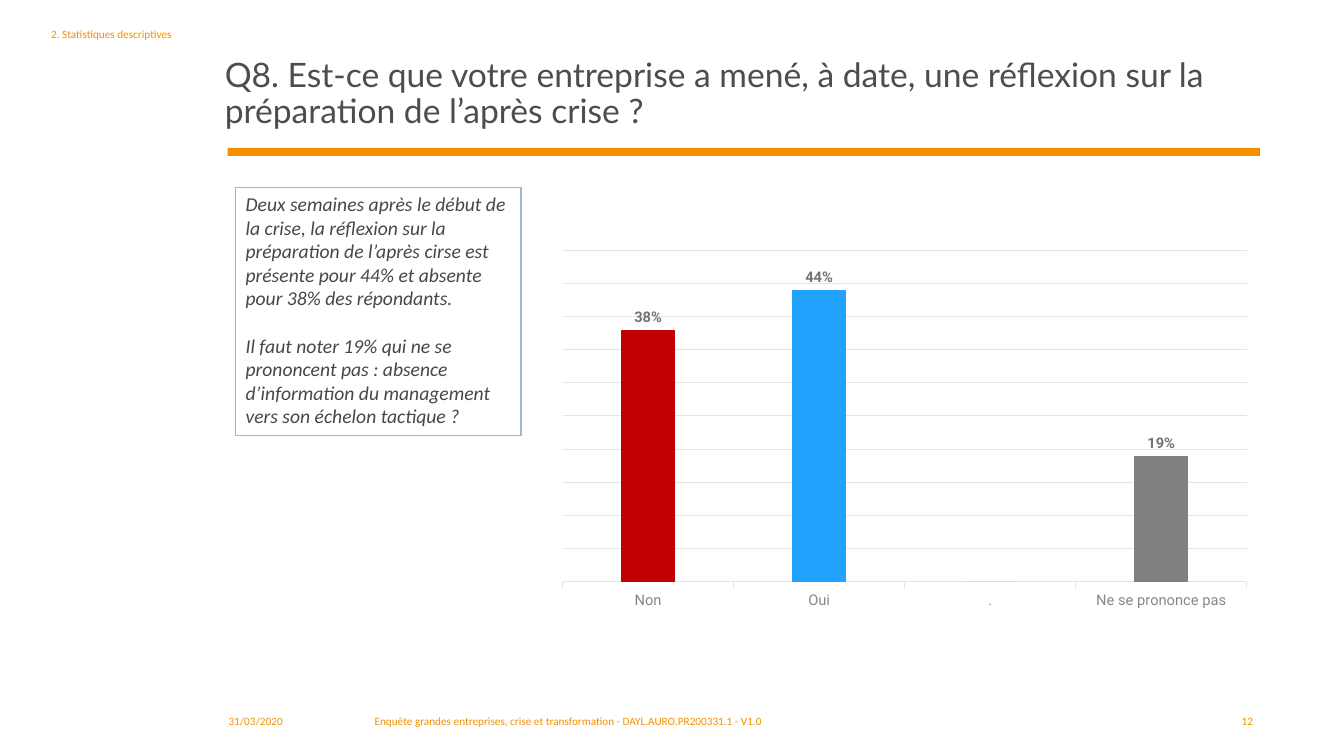
from dataclasses import dataclass

from pptx import Presentation
from pptx.chart.data import CategoryChartData
from pptx.dml.color import RGBColor
from pptx.enum.chart import XL_CHART_TYPE, XL_LABEL_POSITION, XL_TICK_LABEL_POSITION, XL_TICK_MARK
from pptx.enum.shapes import MSO_SHAPE
from pptx.enum.text import MSO_ANCHOR, MSO_AUTO_SIZE, PP_ALIGN
from pptx.util import Cm, Pt

COLUMNS = XL_CHART_TYPE.COLUMN_CLUSTERED
OUTSIDE_END = XL_LABEL_POSITION.OUTSIDE_END
TICK_OUT, TICK_NONE = XL_TICK_MARK.OUTSIDE, XL_TICK_MARK.NONE
LABELS_LOW = XL_TICK_LABEL_POSITION.LOW
RECTANGLE = MSO_SHAPE.RECTANGLE
TOP, BOTTOM = MSO_ANCHOR.TOP, MSO_ANCHOR.BOTTOM
LEFT, RIGHT = PP_ALIGN.LEFT, PP_ALIGN.RIGHT
NO_FIT = MSO_AUTO_SIZE.NONE


@dataclass(frozen=True)
class Theme:
    accent: str = "F39000"
    title: str = "4D4D4D"
    body: str = "454748"
    paper: str = "FFFFFF"
    border: str = "9BB5DF"
    grid: str = "E3E4E4"
    axis_text: str = "85888A"
    label_text: str = "727577"
    title_font: str = "Lato"
    text_font: str = "Calibri"
    chart_font: str = "Roboto"
    title_size: float = 24
    body_size: float = 14
    small_size: float = 8
    chart_size: float = 10
    label_size: float = 10.5


THEME = Theme()

# Category, share of answers, bar colour
ANSWERS = [
    ("Non", 0.38, "C00000"),
    ("Oui", 0.44, "23A2FF"),
    (".", 0, "D99694"),
    ("Ne se prononce pas", 0.19, "808080"),
]

COMMENTS = [
    "Deux semaines après le début de la crise, la réflexion sur la préparation de "
    "l’après cirse est présente pour 44% et absente pour 38% des répondants.",
    "Il faut noter 19% qui ne se prononcent pas : absence d’information du management "
    "vers son échelon tactique ?",
]

# Text, left, top, width, height (cm), alignment
SMALL_TEXTS = [
    ("2. Statistiques descriptives", 1.04, 0.56, 4.29, 3.48, LEFT),
    ("31/03/2020", 5.51, 17.88, 3.61, 0.91, LEFT),
    ("Enquête grandes entreprises, crise et transformation - DAYL.AURO.PR200331.1 - V1.0",
     9.19, 17.88, 13.89, 0.91, LEFT),
    ("12", 28.73, 17.88, 3.1, 0.91, RIGHT),
]


def apply(target, values):
    for name, value in values.items():
        setattr(target, name, value)


def set_font(font, name, size, color, **extra):
    apply(font, {"name": name, "size": Pt(size), **extra})
    font.color.rgb = RGBColor.from_string(color)


def set_fill(fill, color):
    fill.solid()
    fill.fore_color.rgb = RGBColor.from_string(color)


def set_line(line, color, width):
    line.color.rgb = RGBColor.from_string(color)
    line.width = Pt(width)


def place_title(page, text):
    title = page.shapes.title
    apply(title, {"left": Cm(5.41), "top": Cm(0.56), "width": Cm(26.34), "height": Cm(2.87)})
    apply(title.text_frame, {"text": text, "word_wrap": True, "auto_size": NO_FIT,
                             "vertical_anchor": BOTTOM})
    para = title.text_frame.paragraphs[0]
    apply(para, {"alignment": LEFT, "line_spacing": 0.9})
    set_font(para.runs[0].font, THEME.title_font, THEME.title_size, THEME.title)


def add_small_text(page, text, left, top, width, height, alignment):
    box = page.shapes.add_textbox(Cm(left), Cm(top), Cm(width), Cm(height))
    apply(box.text_frame, {"text": text, "word_wrap": True})
    para = box.text_frame.paragraphs[0]
    para.alignment = alignment
    set_font(para.runs[0].font, THEME.text_font, THEME.small_size, THEME.accent)


def add_rectangle(page, left, top, width, height, fill):
    box = page.shapes.add_shape(RECTANGLE, Cm(left), Cm(top), Cm(width), Cm(height))
    box.shadow.inherit = False
    set_fill(box.fill, fill)
    box.line.fill.background()
    return box


def add_comment_box(page, texts):
    box = add_rectangle(page, 5.94, 4.72, 7.19, 6.25, THEME.paper)
    set_line(box.line, THEME.border, 1)
    frame = box.text_frame
    apply(frame, {"word_wrap": True, "vertical_anchor": TOP})
    for index, text in enumerate(texts):
        para = frame.add_paragraph() if index else frame.paragraphs[0]
        apply(para, {"alignment": LEFT, "space_before": Pt(17 if index else 0)})
        span = para.add_run()
        span.text = text
        set_font(span.font, THEME.text_font, THEME.body_size, THEME.body, italic=True)


def add_answer_chart(page, answers):
    data = CategoryChartData(number_format="0%")
    data.categories = [name for name, _, _ in answers]
    data.add_series("Series 1", [share for _, share, _ in answers])
    chart = page.shapes.add_chart(
        COLUMNS, Cm(13.82), Cm(6.12), Cm(17.96), Cm(9.4), data).chart
    apply(chart, {"has_legend": False, "has_title": False})
    set_font(chart.font, THEME.chart_font, THEME.chart_size, THEME.body)

    # Axes
    names = chart.category_axis
    apply(names, {"major_tick_mark": TICK_OUT, "minor_tick_mark": TICK_NONE,
                  "tick_label_position": LABELS_LOW})
    set_line(names.format.line, THEME.grid, 0.75)
    set_font(names.tick_labels.font, THEME.chart_font, THEME.label_size, THEME.axis_text)
    shares = chart.value_axis
    apply(shares, {"minimum_scale": 0, "maximum_scale": 0.5, "major_unit": 0.05,
                   "has_major_gridlines": True, "visible": False})
    set_line(shares.major_gridlines.format.line, THEME.grid, 0.75)

    # Bars
    plot = chart.plots[0]
    apply(plot, {"gap_width": 219, "overlap": -27, "vary_by_categories": False,
                 "has_data_labels": True})
    series = plot.series[0]
    set_fill(series.format.fill, THEME.accent)
    for index, (_, _, color) in enumerate(answers):
        set_fill(series.points[index].format.fill, color)

    # Labels: the number format leaves zero blank
    labels = plot.data_labels
    apply(labels, {"show_value": True, "position": OUTSIDE_END,
                   "number_format": "0%;;", "number_format_is_linked": False})
    set_font(labels.font, THEME.chart_font, THEME.label_size, THEME.label_text, bold=True)


def main():
    deck = Presentation()
    apply(deck, {"slide_width": Cm(33.87), "slide_height": Cm(19.05)})
    page = deck.slides.add_slide(deck.slide_layouts[5])

    # Heading
    place_title(page, "Q8. Est-ce que votre entreprise a mené, à date, une réflexion "
                      "sur la préparation de l’après crise ?")
    add_rectangle(page, 5.74, 3.73, 26.01, 0.2, THEME.accent)

    # Section name and footer
    for small_text in SMALL_TEXTS:
        add_small_text(page, *small_text)

    # Content
    add_answer_chart(page, ANSWERS)
    add_comment_box(page, COMMENTS)
    deck.save("out.pptx")


if __name__ == "__main__":
    main()
